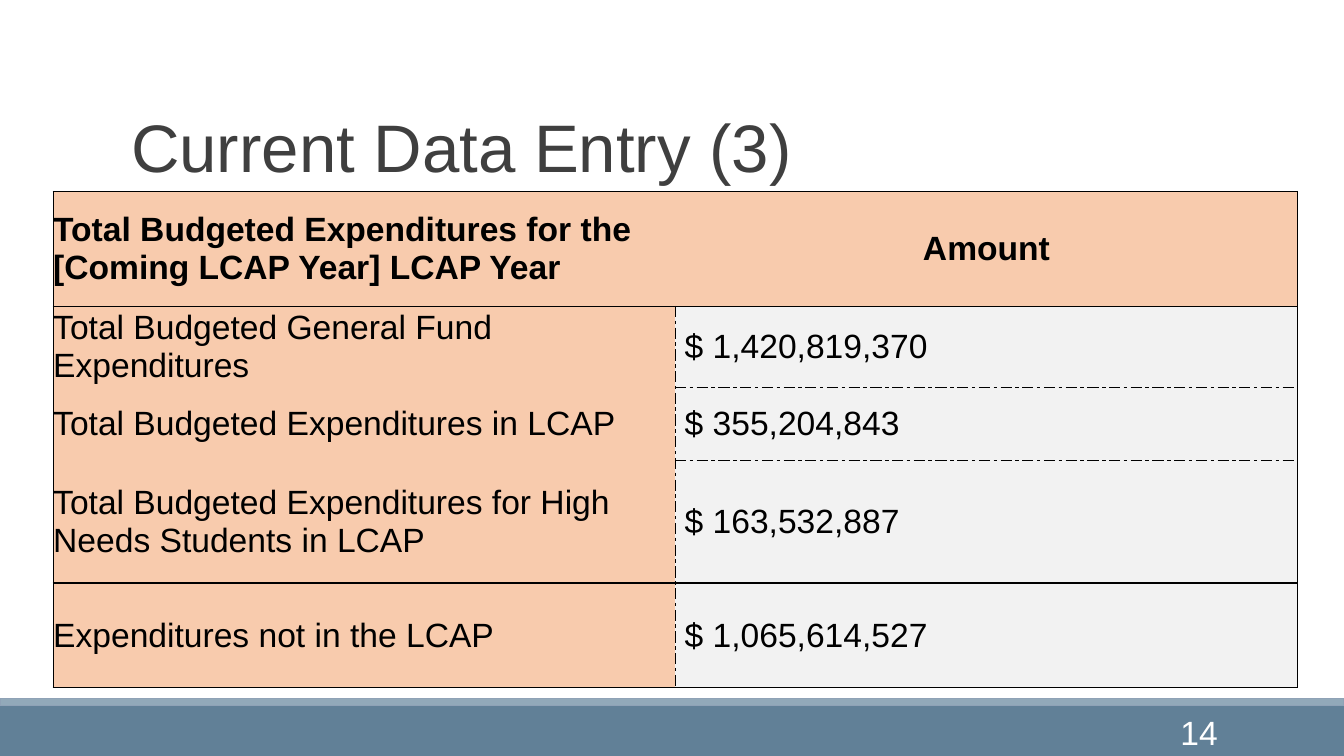
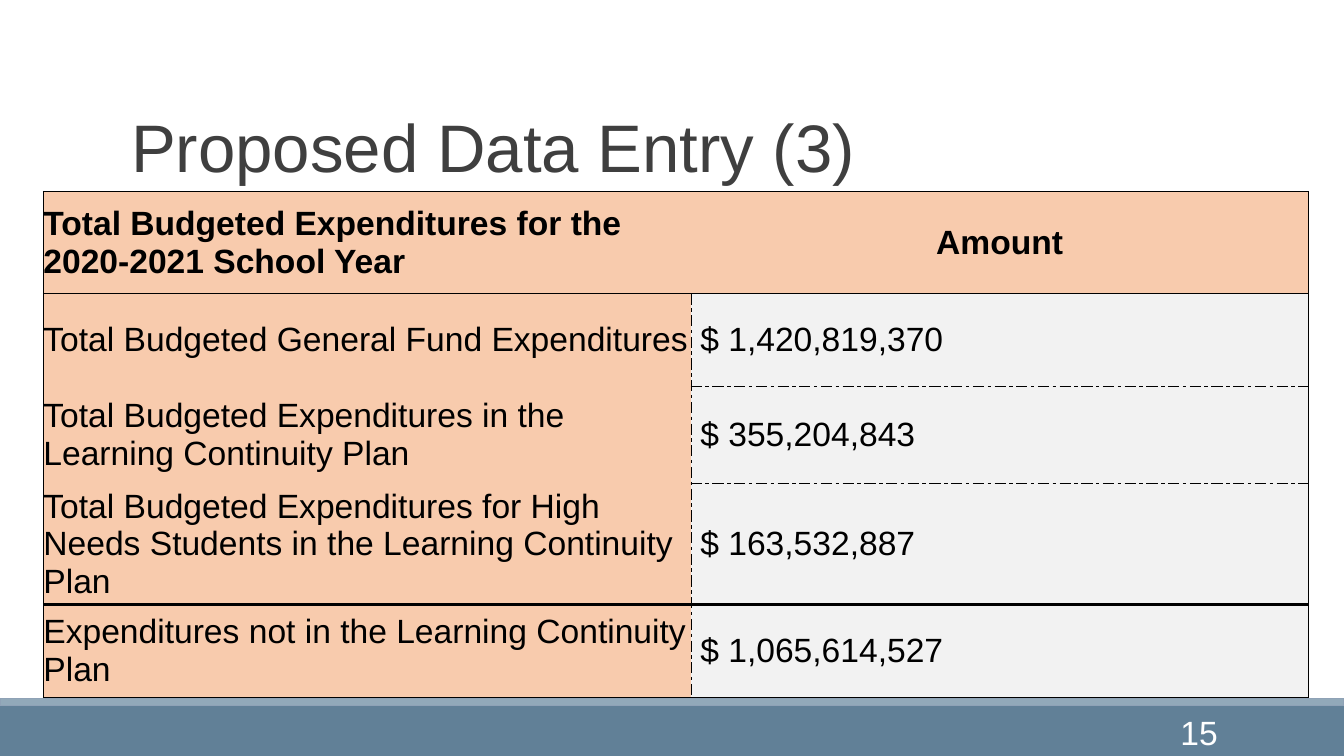
import pptx
import pptx.util
import pptx.dml.color
import pptx.enum.text
import pptx.enum.shapes
import pptx.oxml
import pptx.oxml.ns

Pt = pptx.util.Pt
ALIGN = pptx.enum.text.PP_ALIGN
ANCHOR = pptx.enum.text.MSO_ANCHOR

FONT = "Arial"
BLACK, WHITE, TITLE = "000000", "FFFFFF", "3F3F3F"
BAND, STRIPE, STRIPE_LINE = "618097", "92A9B9", "8FA2B6"
LABEL_FILL, AMOUNT_FILL = "F8CBAD", "F2F2F2"

OUTER, HEADER, TOTAL, INNER = (1, "solid"), (0.5, "solid"), (2, "solid"), (0.5, "dashDot")
LABEL_RULES = [OUTER, HEADER, None, None, TOTAL, OUTER]
AMOUNT_RULES = [OUTER, HEADER, INNER, INNER, TOTAL, OUTER]

SLIDES = [
    {
        "title": "Current Data Entry (3)",
        "number": "14",
        "origin": (38, 136.8),
        "cols": [444.4, 444.4],
        "heights": [82, 53.6, 52.4, 87.8, 74.8],
        "rows": [
            ("Total Budgeted Expenditures for the\v[Coming LCAP Year] LCAP Year", "Amount"),
            ("Total Budgeted General Fund Expenditures", "$ 1,420,819,370"),
            ("Total Budgeted Expenditures in LCAP", "$ 355,204,843"),
            ("Total Budgeted Expenditures for High Needs Students in LCAP", "$ 163,532,887"),
            ("Expenditures not in the LCAP", "$ 1,065,614,527"),
        ],
    },
    {
        "title": "Proposed Data Entry (3)",
        "number": "15",
        "origin": (31, 136.8),
        "cols": [462.6, 440.8],
        "heights": [73, 66.3, 69.3, 80, 66.3],
        "rows": [
            ("Total Budgeted Expenditures for the\v2020-2021 School Year", "Amount"),
            ("Total Budgeted General Fund Expenditures", "$ 1,420,819,370"),
            ("Total Budgeted Expenditures in the Learning Continuity Plan", "$ 355,204,843"),
            ("Total Budgeted Expenditures for High Needs Students in the Learning Continuity Plan",
             "$ 163,532,887"),
            ("Expenditures not in the Learning Continuity Plan", "$ 1,065,614,527"),
        ],
    },
]


def rgb(color):
    return pptx.dml.color.RGBColor.from_string(color)


def write(tf, text, size=24, color=BLACK, bold=False, align=ALIGN.LEFT, spacing=None):
    p = tf.paragraphs[0]
    p.text = text
    p.alignment = align
    if spacing:
        p.line_spacing = spacing
    for r in p.runs:
        r.font.name = FONT
        r.font.size = Pt(size)
        r.font.bold = bold
        r.font.color.rgb = rgb(color)


def place(sp, left, top, width, height):
    sp.left, sp.top, sp.width, sp.height = Pt(left), Pt(top), Pt(width), Pt(height)


def add_title(s, text, box):
    sp = s.shapes.title
    place(sp, *box)
    tf = sp.text_frame
    tf.word_wrap = True
    tf.auto_size = pptx.enum.text.MSO_AUTO_SIZE.NONE
    tf.vertical_anchor = ANCHOR.BOTTOM
    write(tf, text, size=48, color=TITLE, spacing=0.85)


def add_rect(s, box, fill, line=None):
    sp = s.shapes.add_shape(pptx.enum.shapes.MSO_SHAPE.RECTANGLE, *map(Pt, box))
    sp.shadow.inherit = False
    sp.fill.solid()
    sp.fill.fore_color.rgb = rgb(fill)
    if line:
        sp.line.color.rgb = rgb(line)
        sp.line.width = Pt(1.25)
    else:
        sp.line.fill.background()


def add_footer(s, number, box):
    left, top, width, height = box
    stripe = 5
    add_rect(s, (left, top + stripe, width, height - stripe), BAND)
    add_rect(s, (left, top, width, stripe), STRIPE, STRIPE_LINE)
    sp = s.shapes.add_textbox(Pt(left + 774), Pt(top + 9.5), Pt(103), Pt(29))
    tf = sp.text_frame
    tf.word_wrap = True
    tf.vertical_anchor = ANCHOR.MIDDLE
    write(tf, number, color=WHITE, align=ALIGN.RIGHT)


def set_borders(cell, left, right, top, bottom):
    tcPr = cell._tc.get_or_add_tcPr()
    for side, rule in zip("LRTB", (left, right, top, bottom)):
        ns = pptx.oxml.ns.nsdecls("a")
        if rule:
            width, dash = rule
            xml = (f'<a:ln{side} {ns} w="{Pt(width)}"><a:solidFill><a:srgbClr val="{BLACK}"/>'
                   f'</a:solidFill><a:prstDash val="{dash}"/></a:ln{side}>')
        else:
            xml = f'<a:ln{side} {ns} w="0"><a:noFill/></a:ln{side}>'
        tcPr.append(pptx.oxml.parse_xml(xml))


def format_cell(cell, text, row, col):
    header, amount = row == 0, col == 1
    cell.margin_left = Pt(6.67 if amount and not header else 0)
    cell.margin_right = cell.margin_top = cell.margin_bottom = 0
    cell.vertical_anchor = ANCHOR.MIDDLE
    align = ALIGN.CENTER if header and amount else ALIGN.LEFT
    write(cell.text_frame, text, bold=header, align=align)
    middle = None if header else INNER
    left, right = (middle, OUTER) if amount else (OUTER, middle)
    rules = AMOUNT_RULES if amount else LABEL_RULES
    set_borders(cell, left, right, rules[row], rules[row + 1])
    cell.fill.solid()
    cell.fill.fore_color.rgb = rgb(AMOUNT_FILL if amount and not header else LABEL_FILL)


def add_budget_table(s, origin, cols, heights, rows):
    box = (*origin, sum(cols), sum(heights))
    table = s.shapes.add_table(len(rows), len(cols), *map(Pt, box)).table
    table.horz_banding = False
    for column, width in zip(table.columns, cols):
        column.width = Pt(width)
    for i, (height, texts) in enumerate(zip(heights, rows)):
        table.rows[i].height = Pt(height)
        for j, text in enumerate(texts):
            format_cell(table.cell(i, j), text, i, j)


def add_data_slide(prs, title, number, origin, cols, heights, rows):
    s = prs.slides.add_slide(prs.slide_layouts[5])
    add_title(s, title, (86.4, 22.4, 792, 114.4))
    add_footer(s, number, (0, 499, 960, 41))
    add_budget_table(s, origin, cols, heights, rows)


def main():
    prs = pptx.Presentation()
    prs.slide_width, prs.slide_height = Pt(960), Pt(540)
    for data in SLIDES:
        add_data_slide(prs, **data)
    prs.save("out.pptx")


if __name__ == "__main__":
    main()
